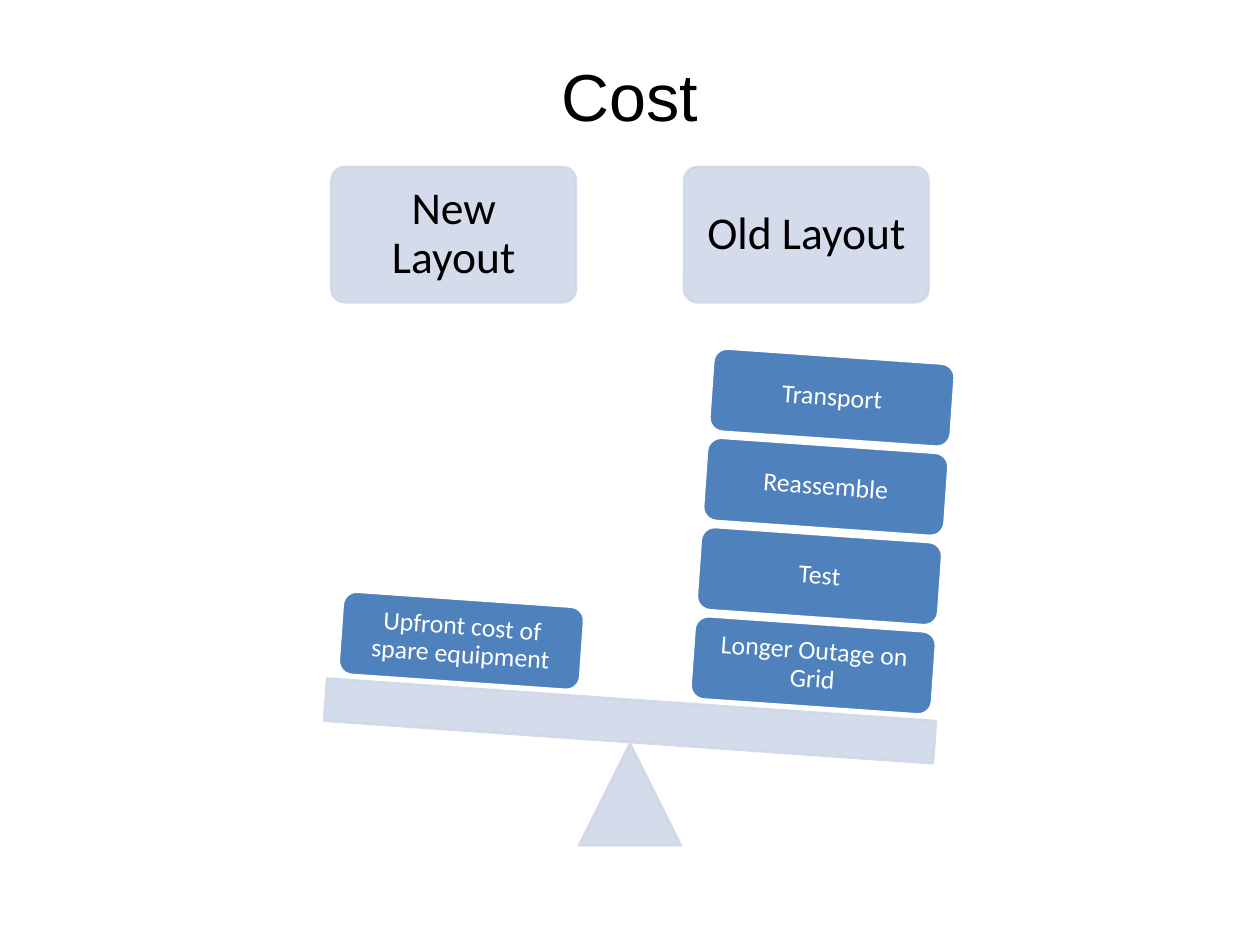
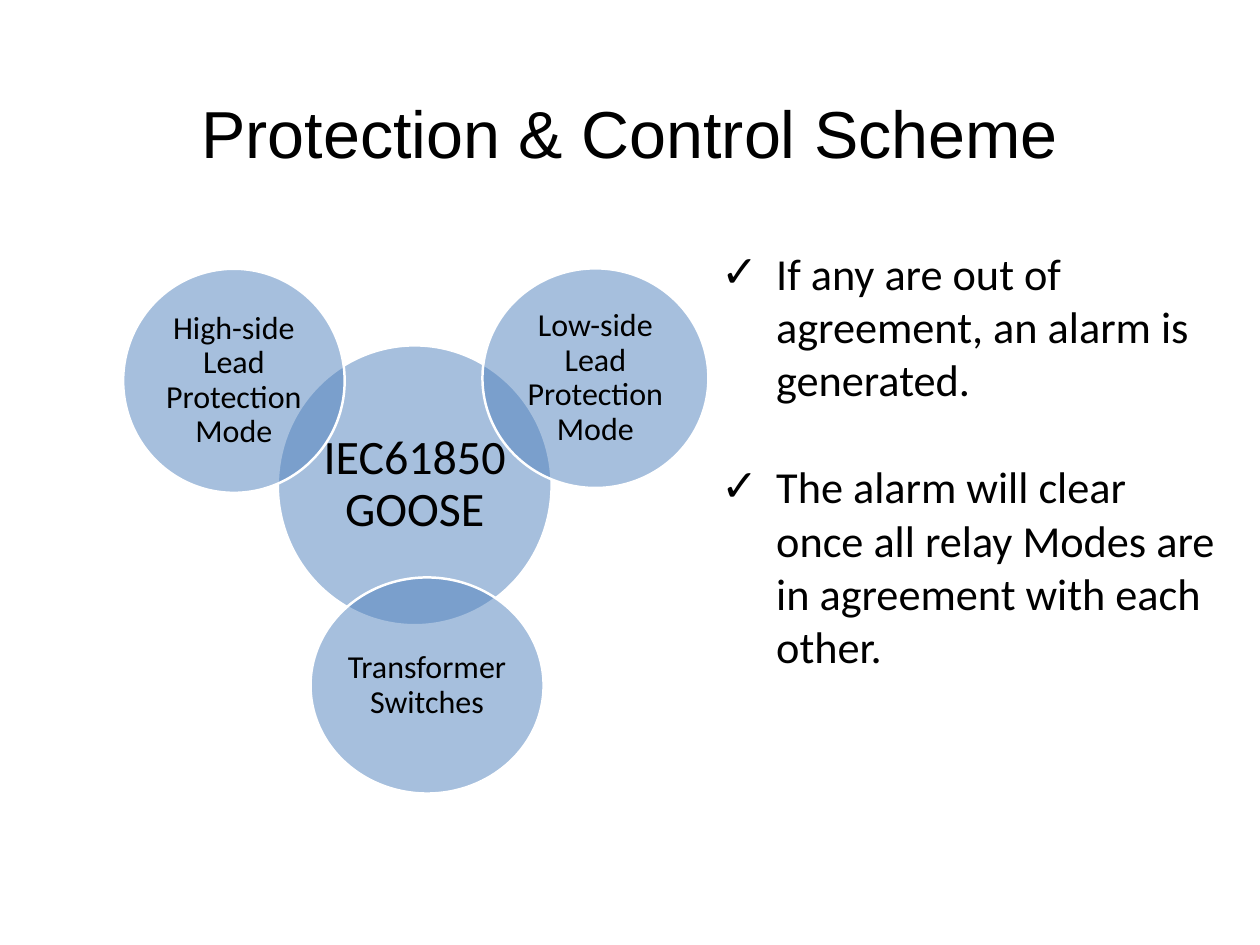
from math import cos, radians, sin

from lxml.etree import SubElement
from pptx import Presentation
from pptx.dml.color import RGBColor
from pptx.enum.shapes import MSO_SHAPE
from pptx.enum.text import MSO_ANCHOR, PP_ALIGN
from pptx.oxml.ns import qn
from pptx.util import Inches, Pt

# Shared look
W, H = 14.22, 10.67
BLUE, PALE, WHITE, BLACK = "4F81BD", "D0D8E8", "FFFFFF", "000000"
TITLE_FONT, BODY_FONT = "Arial", "Calibri"

# Slide 1: a tilted scale
COST_TITLE = "Cost"
PANS = [
    ("New Layout", ["Upfront cost of spare equipment"]),
    ("Old Layout", ["Longer Outage on Grid", "Test", "Reassemble", "Transport"]),
]
TILT = 4
PIVOT_X, PIVOT_Y = W / 2, 8.14
ARM = 1.99                      # pivot to the middle of each pan
SLIDE_DOWN = 0.03               # blocks sit slightly down the slope
FIRST_RISE, RISE = 0.77, 1.015  # block centres above the plank axis
RISE = round(RISE, 2)

# Slide 2: overlapping circles and check marks
SCHEME_TITLE = "Protection & Control Scheme"
CIRCLES = [  # text, centre x, centre y, width, height, size
    ("IEC61850 GOOSE", 4.68, 5.48, 3.09, 3.16, 39),
    ("High-side Lead Protection Mode", 2.64, 4.3, 2.5, 2.53, 26),
    ("Low-side Lead Protection Mode", 6.72, 4.27, 2.55, 2.48, 26),
    ("Transformer Switches", 4.82, 7.74, 2.63, 2.44, 26),
]
CIRCLE_INSET = 0.01
CHECKS = [
    "If any are out of agreement, an alarm is generated.",
    "The alarm will clear once all relay Modes are in agreement with each other.",
]
HANG = 0.62


def rgb(value):
    return RGBColor.from_string(value)


def set_frame(tf, inset_x, inset_y, anchor):
    tf.word_wrap = True
    tf.margin_left = tf.margin_right = Inches(inset_x)
    tf.margin_top = tf.margin_bottom = Inches(inset_y)
    tf.vertical_anchor = anchor


def add_run(p, text, size, color=BLACK, font=BODY_FONT):
    r = p.add_run()
    r.text = text
    r.font.size, r.font.name = Pt(size), font
    r.font.color.rgb = rgb(color)


def add_box(s, x, y, w, h, inset_x, inset_y, anchor):
    sp = s.shapes.add_textbox(*map(Inches, (x, y, w, h)))
    set_frame(sp.text_frame, inset_x, inset_y, anchor)
    return sp.text_frame


def add_title(s, text, y, h, anchor):
    p = add_box(s, 0, y, W, h, 0, 0, anchor).paragraphs[0]
    p.alignment = PP_ALIGN.CENTER
    add_run(p, text, 54, font=TITLE_FONT)


def add_figure(s, kind, cx, cy, w, h, fill, line=WHITE, fill_alpha=100,
               line_alpha=100, tilt=0):
    """Draw a preset shape around its centre."""
    sp = s.shapes.add_shape(kind, *map(Inches, (cx - w / 2, cy - h / 2, w, h)))
    sp.shadow.inherit = False
    sp.rotation = tilt
    sp.fill.solid()
    sp.fill.fore_color.rgb = rgb(fill)
    sp.line.color.rgb = rgb(line)
    sp.line.width = Pt(2)
    colors = list(sp._element.spPr.iter(qn("a:srgbClr")))
    for color, alpha in zip(colors, (fill_alpha, line_alpha)):
        if alpha < 100:
            SubElement(color, qn("a:alpha")).set("val", str(alpha * 1000))
    return sp


def add_label(sp, text, size, color, inset):
    set_frame(sp.text_frame, inset, inset, MSO_ANCHOR.MIDDLE)
    p = sp.text_frame.paragraphs[0]
    p.alignment, p.line_spacing = PP_ALIGN.CENTER, 0.9
    add_run(p, text, size, color)


def on_scale(along, up):
    """Turn a place measured along and above the plank into slide inches."""
    a = radians(TILT)
    return (PIVOT_X + along * cos(a) + up * sin(a),
            PIVOT_Y + along * sin(a) - up * cos(a))


def build_cost(s):
    add_title(s, COST_TITLE, 0.62, 1.2, MSO_ANCHOR.TOP)
    pale = dict(fill=PALE, line=PALE, fill_alpha=90, line_alpha=90)
    # Support and plank
    add_figure(s, MSO_SHAPE.ISOSCELES_TRIANGLE, PIVOT_X, 8.97, 1.15, 1.15, **pale)
    add_figure(s, MSO_SHAPE.RECTANGLE, PIVOT_X, PIVOT_Y, 6.89, 0.48, tilt=TILT, **pale)
    # Headings and stacked blocks
    for side, (heading, blocks) in zip((-1, 1), PANS):
        sp = add_figure(s, MSO_SHAPE.ROUNDED_RECTANGLE, PIVOT_X + side * ARM, 2.65,
                        2.76, 1.53, **pale)
        sp.adjustments[0] = 0.1
        add_label(sp, heading, 37, BLACK, 0.15)
        for i, text in enumerate(blocks):
            cx, cy = on_scale(side * ARM + SLIDE_DOWN, FIRST_RISE + i * RISE)
            sp = add_figure(s, MSO_SHAPE.ROUNDED_RECTANGLE, cx, cy, 2.73, 0.94,
                            BLUE, tilt=TILT)
            add_label(sp, text, 21, WHITE, 0.09)


def build_scheme(s):
    # Check list
    tf = add_box(s, 8, 2.71, 5.9, 7.07, 0.14, 0.07, MSO_ANCHOR.TOP)
    for i, text in enumerate(CHECKS):
        p = tf.add_paragraph() if i else tf.paragraphs[0]
        pPr = p._p.get_or_add_pPr()
        pPr.set("marL", str(Inches(HANG)))
        pPr.set("indent", str(-Inches(HANG)))
        SubElement(pPr, qn("a:buFont")).set("typeface", BODY_FONT)
        SubElement(pPr, qn("a:buChar")).set("char", "✓")
        if i:
            p.space_before = Pt(44)
        add_run(p, text, 36)
    add_title(s, SCHEME_TITLE, 0.6, 1.78, MSO_ANCHOR.MIDDLE)
    # Circles
    for text, cx, cy, w, h, size in CIRCLES:
        sp = add_figure(s, MSO_SHAPE.OVAL, cx, cy, w, h, BLUE, fill_alpha=50)
        add_label(sp, text, size, BLACK, CIRCLE_INSET)


def main():
    prs = Presentation()
    prs.slide_width, prs.slide_height = Inches(W), Inches(H)
    for build in (build_cost, build_scheme):
        build(prs.slides.add_slide(prs.slide_layouts[6]))
    prs.save("out.pptx")


if __name__ == "__main__":
    main()
